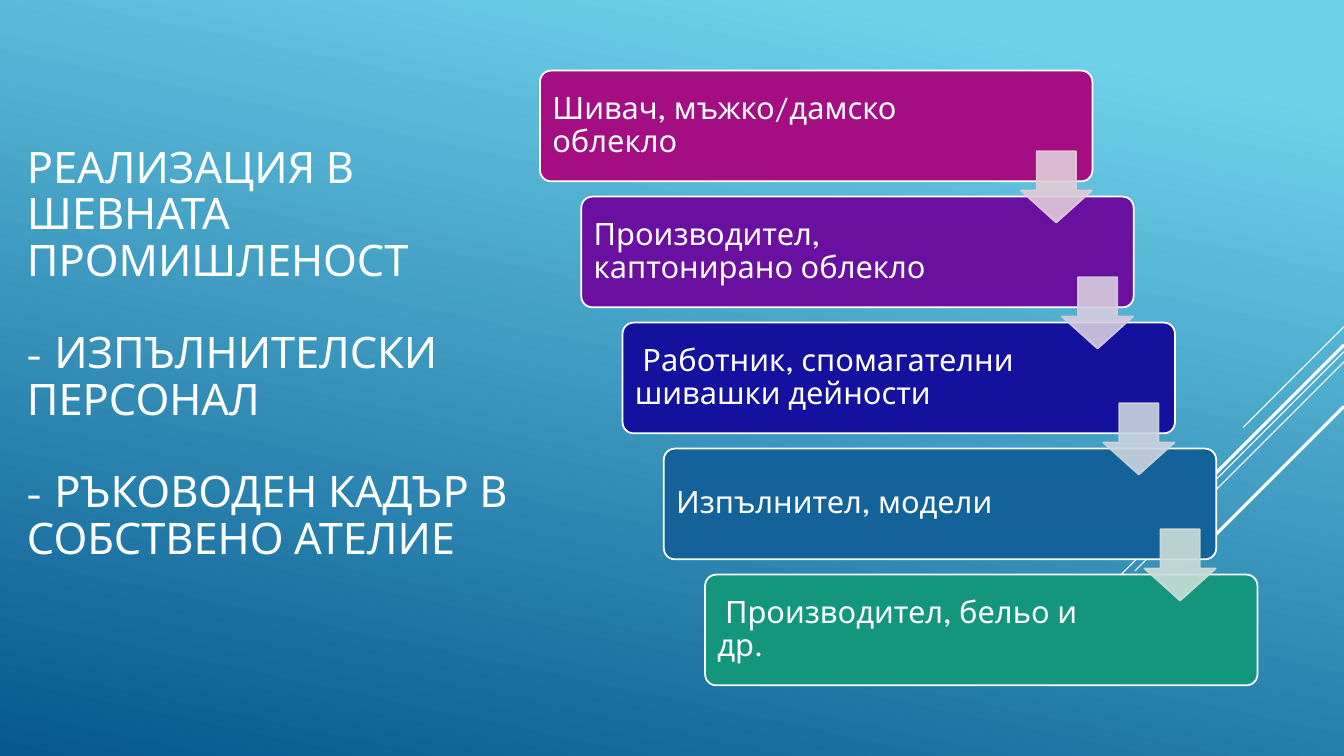
from typing import NamedTuple

from lxml import etree
from pptx import Presentation
from pptx.dml.color import RGBColor
from pptx.enum import shapes, text
from pptx.oxml import ns
from pptx.util import Cm, Pt

FONT = "League Spartan"
WHITE = RGBColor(0xFF, 0xFF, 0xFF)
SKY = RGBColor(0x6E, 0xD2, 0xEB)
DEEP_BLUE = RGBColor(0x06, 0x58, 0x8E)
MAGENTA = RGBColor(0xA5, 0x0E, 0x82)
PURPLE = RGBColor(0x6A, 0x10, 0xA1)
NAVY = RGBColor(0x13, 0x11, 0x9D)
BLUE = RGBColor(0x13, 0x63, 0x9A)
GREEN = RGBColor(0x14, 0x96, 0x7C)
PALE_PINK = RGBColor(0xE1, 0xCC, 0xD8)
PALE_VIOLET = RGBColor(0xD6, 0xCC, 0xDF)
PALE_BLUE = RGBColor(0xCC, 0xD4, 0xDE)
PALE_GREEN = RGBColor(0xCC, 0xDD, 0xD8)

STEP_X, STEP_Y = 1.04, 3.175


class Ray(NamedTuple):
    """A diagonal from the right slide edge, running down and left at 45 degrees."""
    start_y: float
    inset: float
    run: float
    weight: float


class Job(NamedTuple):
    label: str
    color: RGBColor


RAYS = [
    Ray(8.23, 0, 2.54, 0.75),
    Ray(8.86, 0, 8.28, 0.75),
    Ray(9.12, 0, 5.27, 0.75),
    Ray(8.69, 0, 4.85, 2.25),
    Ray(10.24, 0, 3.53, 2.25),
]
JOBS = [
    Job("Шивач, мъжко/дамско облекло", MAGENTA),
    Job("Производител, каптонирано облекло", PURPLE),
    Job(" Работник, спомагателни шивашки дейности", NAVY),
    Job("Изпълнител, модели", BLUE),
    Job(" Производител, бельо и др.", GREEN),
]
ARROW_COLORS = [PALE_PINK, PALE_VIOLET, PALE_BLUE, PALE_GREEN]
HEADING = [
    "РЕАЛИЗАЦИЯ В ШЕВНАТА ПРОМИШЛЕНОСТ",
    "- ИЗПЪЛНИТЕЛСКИ ПЕРСОНАЛ",
    "- РЪКОВОДЕН КАДЪР В СОБСТВЕНО АТЕЛИЕ",
]


def write_text(frame, paragraphs: list[str], *, size: float, line_spacing: float,
               gap: float = 0, left: float = 0.25, right: float = 0.25,
               bottom: float = 0.13) -> None:
    """Fill a frame; gap is in points, insets are in centimetres."""
    frame.word_wrap = True
    frame.auto_size = text.MSO_AUTO_SIZE.NONE
    frame.vertical_anchor = text.MSO_ANCHOR.MIDDLE
    frame.margin_left, frame.margin_right = Cm(left), Cm(right)
    frame.margin_top, frame.margin_bottom = Cm(0.13), Cm(bottom)
    for index, wording in enumerate(paragraphs):
        paragraph = frame.add_paragraph() if index else frame.paragraphs[0]
        paragraph.alignment = text.PP_ALIGN.LEFT
        paragraph.line_spacing = line_spacing
        paragraph.space_before = Pt(gap if index else 0)
        run = paragraph.add_run()
        run.text = wording
        run.font.name = FONT
        run.font.size = Pt(size)
        run.font.color.rgb = WHITE


def paint_background(slide) -> None:
    fill = slide.background.fill
    fill.gradient()
    fill.gradient_angle = 258
    for stop, color, position in zip(fill.gradient_stops, (SKY, DEEP_BLUE), (0.1, 1)):
        stop.color.rgb = color
        stop.position = position


def draw_ray(slide, ray: Ray, slide_width: float) -> None:
    start_x = slide_width - ray.inset
    line = slide.shapes.add_connector(
        shapes.MSO_CONNECTOR.STRAIGHT, Cm(start_x), Cm(ray.start_y),
        Cm(start_x - ray.run), Cm(ray.start_y + ray.run))
    line.line.color.rgb = WHITE
    line.line.width = Pt(ray.weight)
    etree.SubElement(line._element.spPr, ns.qn("a:effectLst"))


def add_filled(slide, preset, left: float, top: float, width: float, height: float,
               fill: RGBColor, outline: RGBColor, adjustments: list[float]):
    shape = slide.shapes.add_shape(preset, Cm(left), Cm(top), Cm(width), Cm(height))
    shape.shadow.inherit = False
    shape.fill.solid()
    shape.fill.fore_color.rgb = fill
    shape.line.color.rgb = outline
    shape.line.width = Pt(1.25)
    for index, value in enumerate(adjustments):
        shape.adjustments[index] = value
    return shape


def draw_job(slide, index: int, job: Job) -> None:
    box = add_filled(slide, shapes.MSO_SHAPE.ROUNDED_RECTANGLE,
                     13.61 + index * STEP_X, 1.78 + index * STEP_Y, 13.92, 2.79,
                     job.color, WHITE, [0.1])
    write_text(box.text_frame, [job.label], size=22, line_spacing=0.9,
               left=0.23, right=3.1)


def draw_arrow(slide, index: int, color: RGBColor) -> None:
    arrow = add_filled(slide, shapes.MSO_SHAPE.DOWN_ARROW,
                       25.72 + index * STEP_X, 3.81 + index * STEP_Y, 1.8, 1.8,
                       color, color, [0.55, 0.45])
    for shade in arrow._element.spPr.iter(ns.qn("a:srgbClr")):
        etree.SubElement(shade, ns.qn("a:alpha"), val="90000")


def main() -> None:
    slide_width = 33.87
    deck = Presentation()
    deck.slide_width, deck.slide_height = Cm(slide_width), Cm(19.05)
    slide = deck.slides.add_slide(deck.slide_layouts[5])
    paint_background(slide)

    heading = slide.shapes.title
    heading.left, heading.top = Cm(0.43), Cm(1.78)
    heading.width, heading.height = Cm(13.77), Cm(15.49)
    write_text(heading.text_frame, HEADING, size=31, line_spacing=0.89,
               gap=33, bottom=1.3)

    for ray in RAYS:
        draw_ray(slide, ray, slide_width)
    for index, job in enumerate(JOBS):
        draw_job(slide, index, job)
    for index, color in enumerate(ARROW_COLORS):
        draw_arrow(slide, index, color)
    deck.save("out.pptx")


if __name__ == "__main__":
    main()
